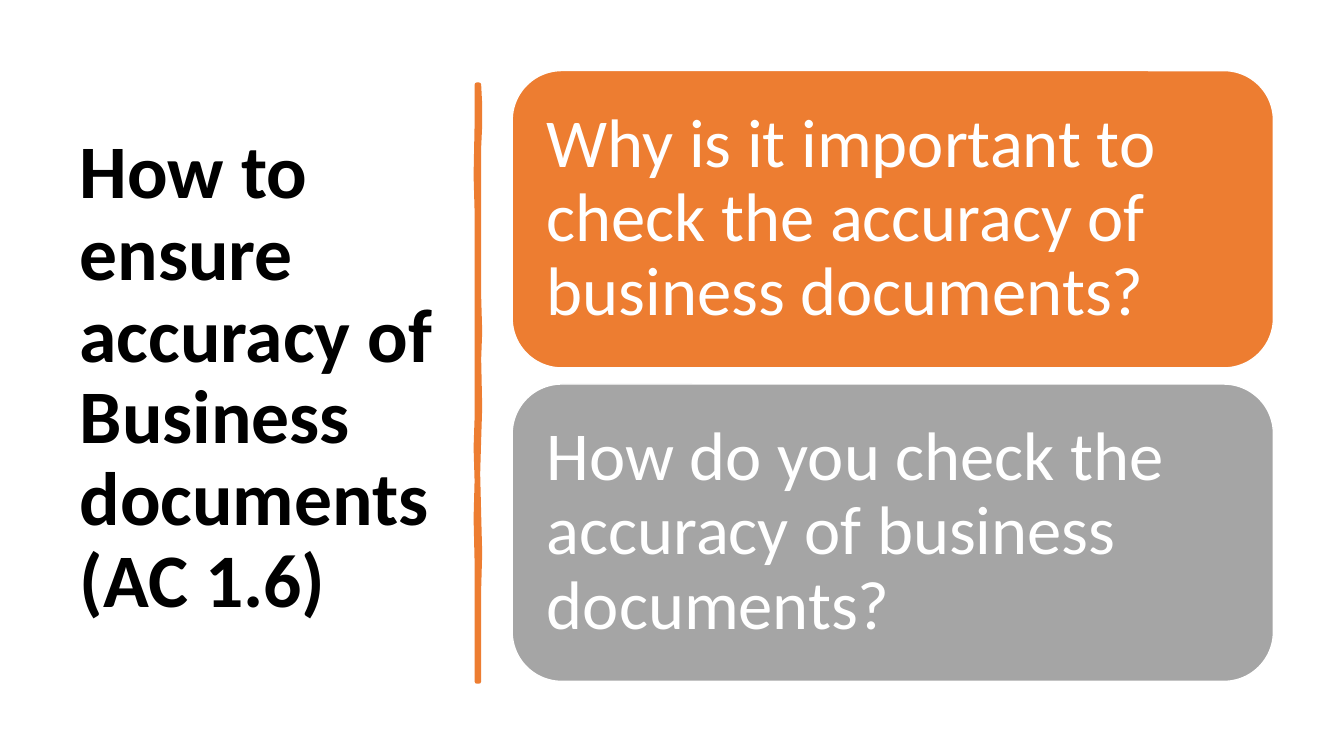
import pptx
import pptx.util
import pptx.dml.color
import pptx.enum.shapes
import pptx.enum.text

Inches = pptx.util.Inches
RGBColor = pptx.dml.color.RGBColor
BLACK = RGBColor(0x00, 0x00, 0x00)
WHITE = RGBColor(0xFF, 0xFF, 0xFF)
ORANGE = RGBColor(0xED, 0x7D, 0x31)
GREY = RGBColor(0xA5, 0xA5, 0xA5)

HEADING = "How to ensure accuracy of Business documents (AC 1.6)"
QUESTIONS = [
    ("Why is it important to check the accuracy of business documents?", ORANGE),
    ("How do you check the accuracy of business documents?", GREY),
]
RIGHT_EDGE = [(0, 0), (0.01, 0.2), (0.01, 0.4), (0, 0.62), (0, 1.42), (0, 2.1),
              (0.01, 2.45), (0, 2.72), (0.01, 3.2), (0, 3.52), (-0.01, 3.86),
              (0, 4.26), (0.01, 4.65), (0, 5), (0, 5.45), (0, 5.92)]
LEFT_EDGE = [(-0.02, 5.92), (-0.02, 5.29), (-0.02, 4.73), (-0.03, 4.3), (-0.02, 3.93),
             (-0.03, 3.6), (-0.02, 3.31), (-0.02, 2.51), (-0.02, 1.66), (-0.02, 1.25),
             (-0.03, 0.9), (-0.02, 0.4), (-0.02, 0)]


def write_text(frame, text, *, size, color, bold=False, inset=(0.1, 0.05)):
    """Fill a text frame with one left-aligned, vertically centred paragraph."""
    frame.word_wrap = True
    frame.auto_size = pptx.enum.text.MSO_AUTO_SIZE.NONE
    frame.vertical_anchor = pptx.enum.text.MSO_ANCHOR.MIDDLE
    frame.margin_left = frame.margin_right = Inches(inset[0])
    frame.margin_top = frame.margin_bottom = Inches(inset[1])
    paragraph = frame.paragraphs[0]
    paragraph.text = text
    paragraph.alignment = pptx.enum.text.PP_ALIGN.LEFT
    paragraph.line_spacing = 0.9
    font = paragraph.font
    font.name = "Calibri"
    font.size = pptx.util.Pt(size)
    font.bold = bold
    font.color.rgb = color


def place_heading(slide, left, top, width, height):
    """Place the slide title in the given box."""
    heading = slide.shapes.title
    heading.left, heading.top = Inches(left), Inches(top)
    heading.width, heading.height = Inches(width), Inches(height)
    write_text(heading.text_frame, HEADING, size=54, color=BLACK, bold=True)


def draw_divider(slide, center, top):
    """Draw the hand-drawn vertical stroke down from the given point."""
    points = [(Inches(center + shift), Inches(top + drop))
              for shift, drop in RIGHT_EDGE + LEFT_EDGE]
    builder = slide.shapes.build_freeform(*points[0])
    builder.add_line_segments(points[1:], close=True)
    divider = builder.convert_to_shape()
    divider.shadow.inherit = False
    divider.fill.solid()
    divider.fill.fore_color.rgb = ORANGE
    divider.line.color.rgb = ORANGE
    divider.line.width = pptx.util.Pt(3.25)


def stack_questions(slide, left, top, width, height, gap=0.16):
    """Stack equal question cards in the given box."""
    card_height = (height - gap * (len(QUESTIONS) - 1)) / len(QUESTIONS)
    for index, (question, color) in enumerate(QUESTIONS):
        card = slide.shapes.add_shape(
            pptx.enum.shapes.MSO_SHAPE.ROUNDED_RECTANGLE,
            Inches(left), Inches(top + index * (card_height + gap)),
            Inches(width), Inches(card_height))
        card.shadow.inherit = False
        card.fill.solid()
        card.fill.fore_color.rgb = color
        card.line.color.rgb = WHITE
        card.line.width = pptx.util.Pt(1)
        write_text(card.text_frame, question, size=49, color=WHITE, inset=(0.2, 0.2))


def main():
    """Build and save the slide."""
    deck = pptx.Presentation()
    deck.slide_width, deck.slide_height = Inches(13.33), Inches(7.5)
    slide = deck.slides.add_slide(deck.slide_layouts.get_by_name("Title Only"))
    place_heading(slide, 0.69, 0.7, 3.74, 6.11)
    draw_divider(slide, 4.75, 0.84)
    stack_questions(slide, 5.08, 0.7, 7.55, 6.06)
    deck.save("out.pptx")


if __name__ == "__main__":
    main()
